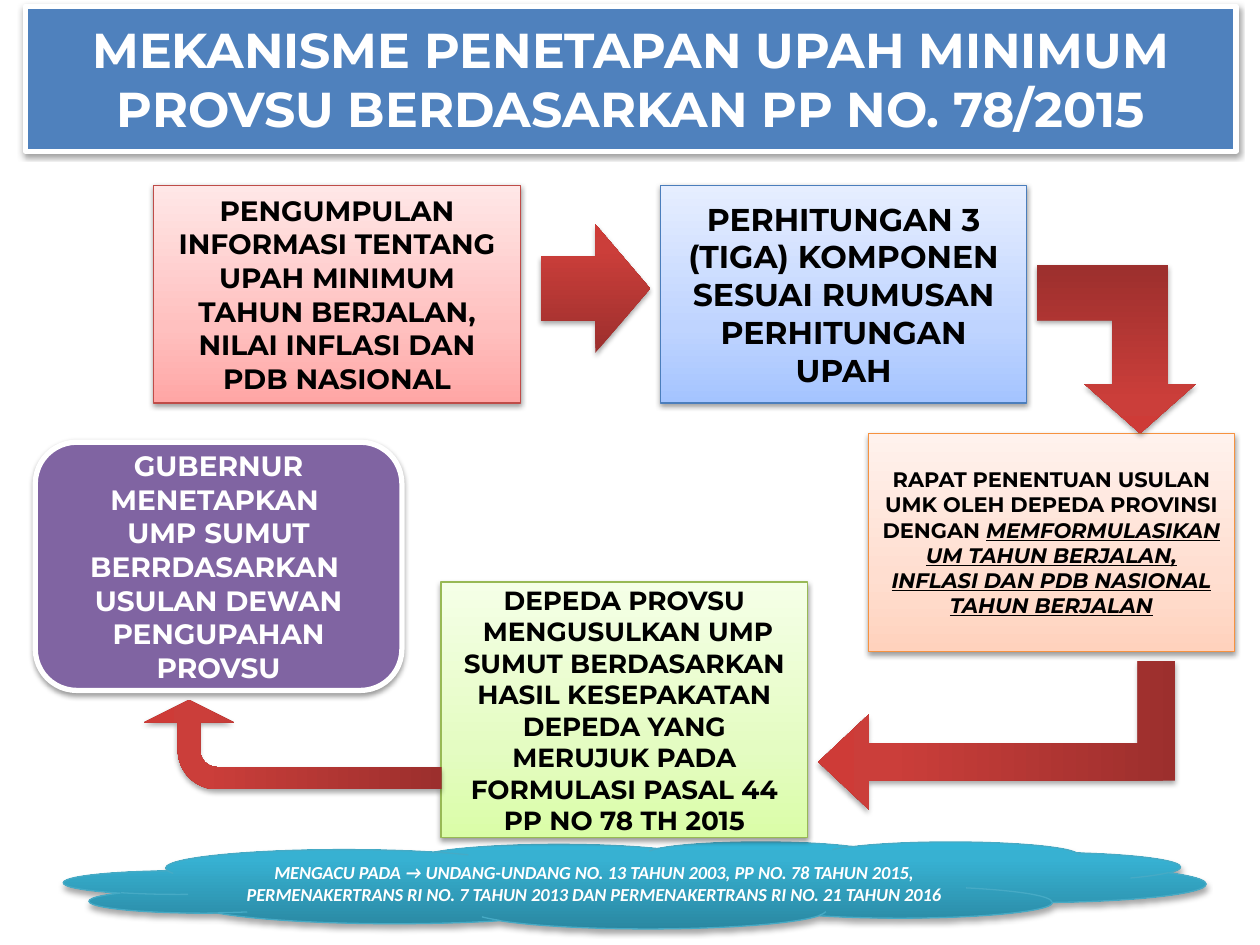
from dataclasses import dataclass

from lxml import etree
from pptx import Presentation
from pptx.dml.color import RGBColor
from pptx.enum.shapes import MSO_SHAPE
from pptx.enum.text import MSO_ANCHOR, MSO_AUTO_SIZE, PP_ALIGN
from pptx.oxml.ns import qn
from pptx.util import Inches, Pt

RECTANGLE = MSO_SHAPE.RECTANGLE
ROUNDED = MSO_SHAPE.FLOWCHART_ALTERNATE_PROCESS
CLOUD = MSO_SHAPE.CLOUD
RIGHT_ARROW = MSO_SHAPE.RIGHT_ARROW
BENT_ARROW = MSO_SHAPE.BENT_ARROW
BENT_UP_ARROW = MSO_SHAPE.BENT_UP_ARROW
CENTER = PP_ALIGN.CENTER
TOP, MIDDLE = MSO_ANCHOR.TOP, MSO_ANCHOR.MIDDLE
NO_FIT, GROW = MSO_AUTO_SIZE.NONE, MSO_AUTO_SIZE.SHAPE_TO_FIT_TEXT


@dataclass(frozen=True)
class Theme:
    heading_font: str = "Montserrat"
    note_font: str = "Calibri"
    white: str = "FFFFFF"
    black: str = "000000"
    title_fill: str = "4F81BD"
    decision_fill: str = "8064A2"
    # Gradients run from the bottom edge to the top: (percent, colour)
    red: tuple = ((0, "FFA6A5"), (35, "FFC0BF"), (100, "FFE7E7"))
    blue: tuple = ((0, "A4C4FF"), (35, "BFD4FF"), (100, "E6EEFF"))
    orange: tuple = ((0, "FFD2BD"), (35, "FFDED0"), (100, "FFF2ED"))
    green: tuple = ((0, "DAFDA7"), (35, "E4FCC2"), (100, "F5FFE7"))
    arrow: tuple = ((0, "9C2F2D"), (80, "CB3E3A"), (100, "CE3B37"))
    cloud: tuple = ((0, "2A88A2"), (80, "37B1D2"), (100, "34B4D6"))
    red_line: str = "BF4C48"
    blue_line: str = "4B7EBC"
    orange_line: str = "F69240"
    green_line: str = "98B955"
    cloud_line: str = "46AAC5"
    thin: float = 0.75
    thick: float = 3
    title_size: float = 28
    large: float = 18
    medium: float = 16
    compact: float = 15
    small: float = 12
    note_size: float = 10.5


THEME = Theme()
STEP_WIDTH, STEP_HEIGHT = 2.91, 1.73


def add_color(parent, color):
    return etree.SubElement(parent, qn("a:srgbClr"), val=color)


def set_gradient(shape, stops):
    shape.fill.gradient()
    gradient = shape._element.spPr.find(qn("a:gradFill"))
    for child in list(gradient):
        gradient.remove(child)
    gradient.set("rotWithShape", "1")
    stop_list = etree.SubElement(gradient, qn("a:gsLst"))
    for percent, color in stops:
        add_color(etree.SubElement(stop_list, qn("a:gs"), pos=str(percent * 1000)), color)
    etree.SubElement(gradient, qn("a:lin"), ang=str(270 * 60000), scaled="0")


def set_shadow(shape, opacity, distance):
    shape.shadow.inherit = False
    effects = shape._element.spPr.find(qn("a:effectLst"))
    shadow = etree.SubElement(
        effects, qn("a:outerShdw"), blurRad=str(Pt(3.1)), dist=str(Pt(distance)),
        dir=str(90 * 60000), rotWithShape="0")
    color = add_color(shadow, THEME.black)
    etree.SubElement(color, qn("a:alpha"), val=str(opacity * 1000))


def style_shape(shape, fill, line=None, line_width=THEME.thin, opacity=38, distance=1.6):
    if isinstance(fill, str):
        shape.fill.solid()
        shape.fill.fore_color.rgb = RGBColor.from_string(fill)
    else:
        set_gradient(shape, fill)
    if line:
        shape.line.color.rgb = RGBColor.from_string(line)
        shape.line.width = Pt(line_width)
    else:
        shape.line.fill.background()
    set_shadow(shape, opacity, distance)


def write_text(shape, text, size, color=THEME.black, font=THEME.heading_font,
               anchor=MIDDLE, fit=NO_FIT):
    frame = shape.text_frame
    frame.text = text
    frame.word_wrap = True
    frame.auto_size = fit
    frame.vertical_anchor = anchor
    for para in frame.paragraphs:
        para.alignment = CENTER
        for span in para.runs:
            format_span(span, size, color, font)


def format_span(span, size, color, font):
    span.font.size = Pt(size)
    span.font.name = font
    span.font.bold = True
    span.font.color.rgb = RGBColor.from_string(color)


def add_box(page, kind, left, top, width, height):
    return page.shapes.add_shape(
        kind, Inches(left), Inches(top), Inches(width), Inches(height))


def add_step(page, left, top, text, size, fill, line, height=STEP_HEIGHT):
    box = add_box(page, RECTANGLE, left, top, STEP_WIDTH, height)
    style_shape(box, fill, line)
    write_text(box, text, size)
    return box


def add_arrow(page, kind, place, adjustments=(), rotation=0, flip=None):
    arrow = add_box(page, kind, *place)
    for index, value in enumerate(adjustments):
        arrow.adjustments[index] = value
    arrow.rotation = rotation
    if flip:
        arrow._element.spPr.get_or_add_xfrm().set(flip, "1")
    style_shape(arrow, THEME.arrow, opacity=35, distance=1.8)


def add_legal_basis(page):
    cloud = add_box(page, CLOUD, 0.51, 6.68, 9.06, 0.69)
    style_shape(cloud, THEME.cloud, THEME.cloud_line, opacity=35, distance=1.8)
    write_text(cloud, "MENGACU PADA → UNDANG-UNDANG NO. 13 TAHUN 2003, PP NO. 78 TAHUN 2015, "
               "PERMENAKERTRANS RI NO. 7 TAHUN 2013 DAN PERMENAKERTRANS RI NO. 21 TAHUN 2016",
               THEME.note_size, THEME.white, THEME.note_font, TOP, GROW)
    cloud.text_frame.paragraphs[0].runs[0].font.italic = True


def add_title(page):
    title = page.shapes.title
    title.left, title.top = Inches(0.2), Inches(0.05)
    title.width, title.height = Inches(9.61), Inches(1.15)
    style_shape(title, THEME.title_fill, THEME.white, THEME.thick)
    write_text(title, "MEKANISME PENETAPAN UPAH MINIMUM PROVSU BERDASARKAN PP NO. 78/2015",
               THEME.title_size, THEME.white)


def add_steps(page):
    add_step(page, 1.22, 1.47, "PENGUMPULAN INFORMASI TENTANG UPAH MINIMUM TAHUN BERJALAN, "
             "NILAI INFLASI DAN PDB NASIONAL", THEME.medium, THEME.red, THEME.red_line)
    add_step(page, 5.24, 1.47, "PERHITUNGAN 3 (TIGA) KOMPONEN SESUAI RUMUSAN PERHITUNGAN UPAH",
             THEME.large, THEME.blue, THEME.blue_line)
    meeting = add_step(page, 6.89, 3.44, "RAPAT PENENTUAN USULAN UMK OLEH DEPEDA PROVINSI DENGAN ",
                       THEME.small, THEME.orange, THEME.orange_line)
    formula = meeting.text_frame.paragraphs[0].add_run()
    formula.text = ("MEMFORMULASIKAN UM TAHUN BERJALAN, INFLASI DAN PDB NASIONAL "
                    "TAHUN BERJALAN")
    format_span(formula, THEME.small, THEME.black, THEME.heading_font)
    formula.font.italic = True
    formula.font.underline = True
    add_step(page, 3.5, 4.62, "DEPEDA PROVSU\n MENGUSULKAN UMP SUMUT BERDASARKAN HASIL KESEPAKATAN "
             "DEPEDA YANG MERUJUK PADA FORMULASI PASAL 44 PP NO 78 TH 2015",
             THEME.compact, THEME.green, THEME.green_line, height=2.03)


def add_decision(page):
    box = add_box(page, ROUNDED, 0.28, 3.51, STEP_WIDTH, 1.97)
    style_shape(box, THEME.decision_fill, THEME.white, THEME.thick)
    write_text(box, "GUBERNUR MENETAPKAN \nUMP SUMUT BERRDASARKAN  USULAN DEWAN PENGUPAHAN PROVSU",
               THEME.medium, THEME.white)


def main():
    deck = Presentation()
    deck.slide_width, deck.slide_height = Inches(10), Inches(7.5)
    page = deck.slides.add_slide(deck.slide_layouts[5])

    # Heading and legal basis
    add_legal_basis(page)
    add_title(page)

    # Steps of the procedure and the final decision
    add_steps(page)
    add_decision(page)

    # Arrows between the steps
    add_arrow(page, RIGHT_ARROW, (4.29, 1.78, 0.87, 1.02))
    add_arrow(page, BENT_ARROW, (1.97, 4.73, 0.71, 2.36), (0.25, 0.5, 0.25, 0.44), 270)
    add_arrow(page, BENT_UP_ARROW, (7.32, 4.42, 1.18, 2.83), (0.25, 0.32, 0.34), 270, "flipH")
    add_arrow(page, BENT_UP_ARROW, (8.23, 2.1, 1.26, 1.34), (0.35, 0.35, 0.31), flip="flipV")

    deck.save("out.pptx")


if __name__ == "__main__":
    main()
